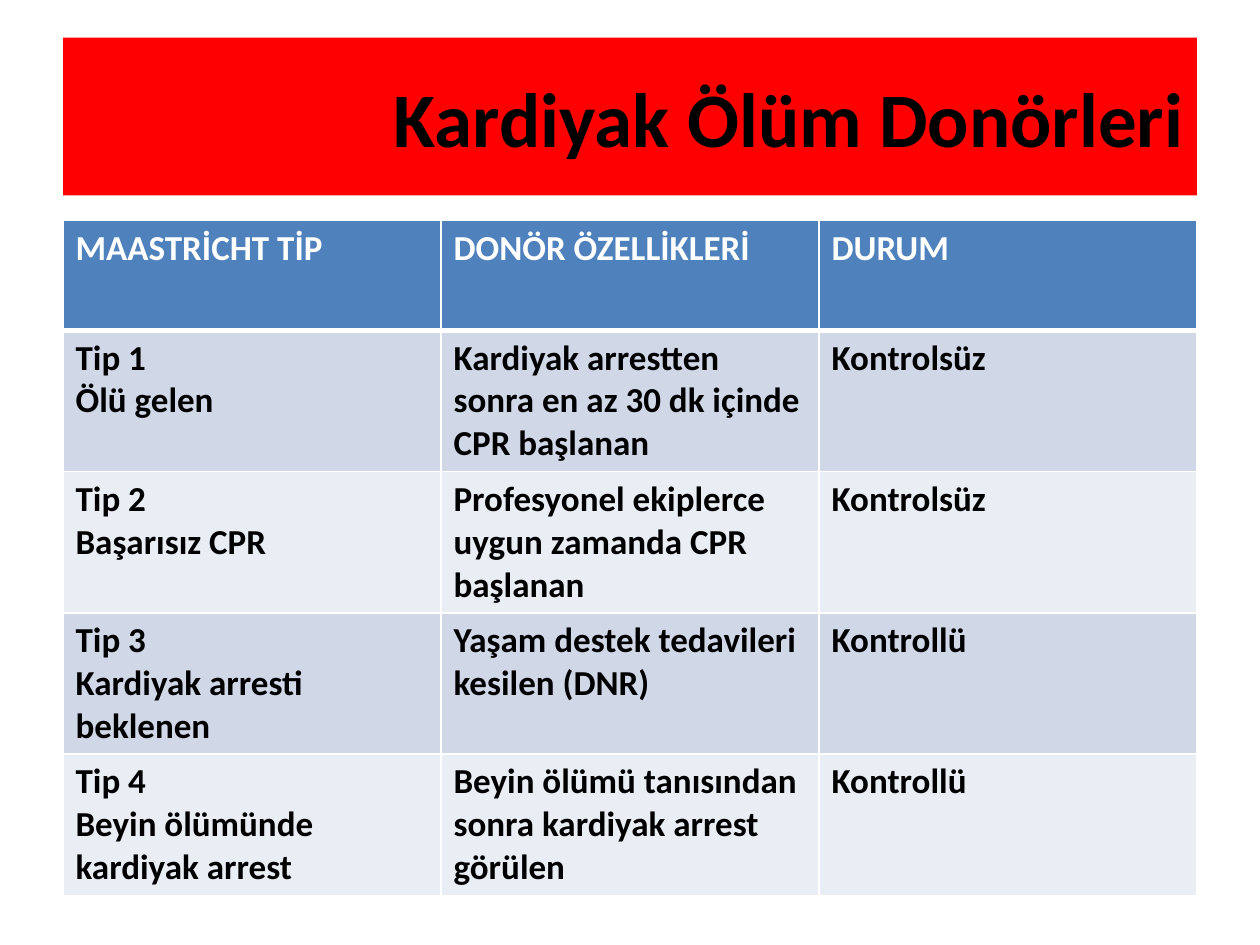
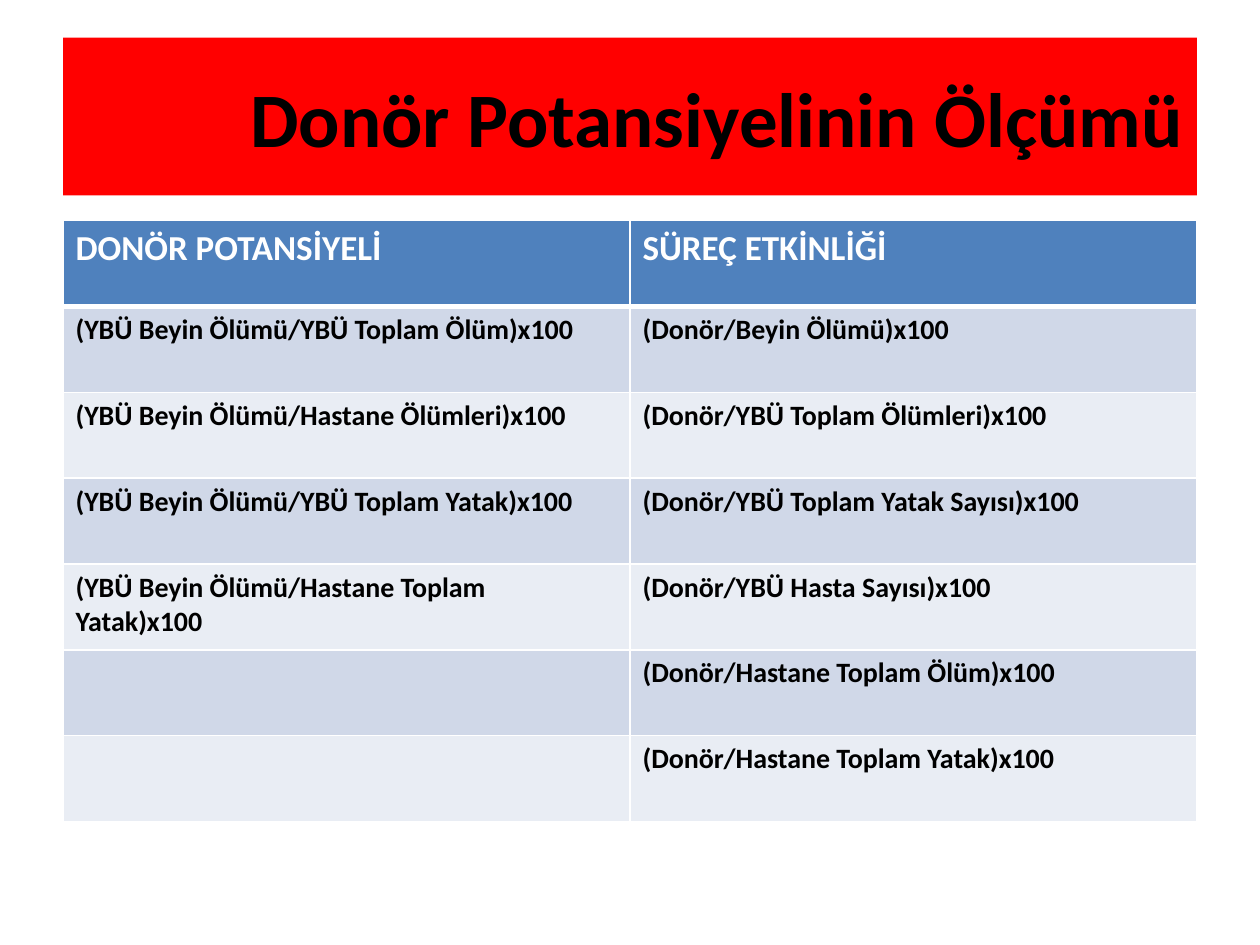
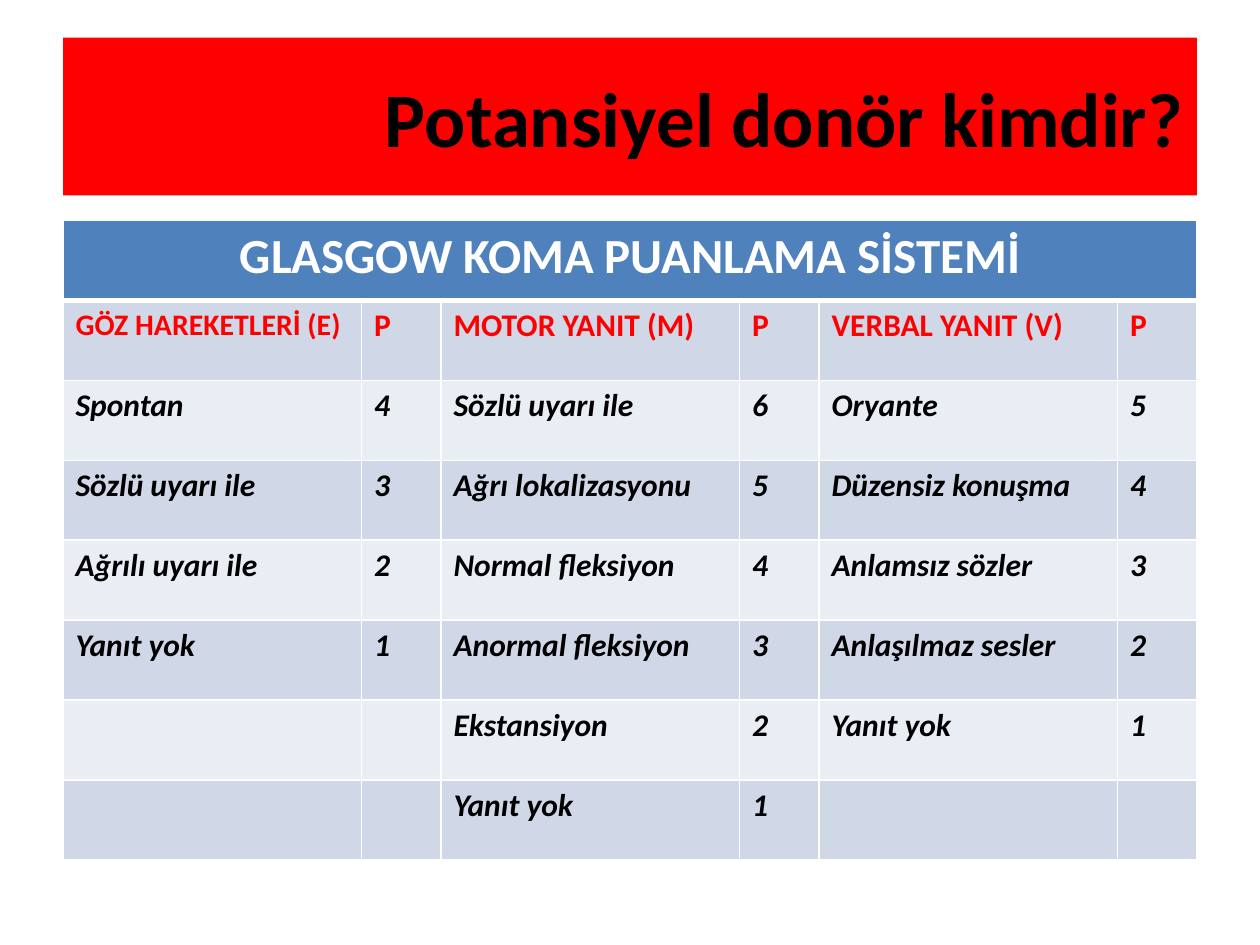
from lxml.etree import SubElement
from pptx import Presentation
from pptx.dml.color import RGBColor
from pptx.enum.text import MSO_ANCHOR, PP_ALIGN
from pptx.oxml.ns import qn
from pptx.util import Cm, Pt

# Content
HEADER = {"size": 20, "color": "FFFFFF"}
SCALE_HEAD = {"size": 18, "color": "FF0000"}
SCALE_BODY = {"size": 18, "italic": True}

SLIDES = [
    {
        "title": "Kardiyak Ölüm Donörleri",
        "columns": [7.62] * 3,
        "row_height": 2.21,
        "table_height": 13.39,
        "header": HEADER,
        "body": {"size": 20},
        "rows": [
            ("MAASTRİCHT TİP", "DONÖR ÖZELLİKLERİ", "DURUM"),
            ("Tip 1\nÖlü gelen",
             "Kardiyak arrestten sonra en az 30 dk içinde CPR başlanan", "Kontrolsüz"),
            ("Tip 2\nBaşarısız CPR",
             "Profesyonel ekiplerce uygun zamanda CPR başlanan", "Kontrolsüz"),
            ("Tip 3\nKardiyak arresti beklenen",
             "Yaşam destek tedavileri kesilen (DNR)", "Kontrollü"),
            ("Tip 4\nBeyin ölümünde kardiyak arrest",
             "Beyin ölümü tanısından sonra kardiyak arrest görülen", "Kontrollü"),
        ],
    },
    {
        "title": "Donör Potansiyelinin Ölçümü",
        "columns": [11.43] * 2,
        "row_height": 1.73,
        "table_height": 12.14,
        "header": HEADER,
        "body": {"size": 16},
        "rows": [
            ("DONÖR POTANSİYELİ", "SÜREÇ ETKİNLİĞİ"),
            ("(YBÜ Beyin Ölümü/YBÜ Toplam Ölüm)x100", "(Donör/Beyin Ölümü)x100"),
            ("(YBÜ Beyin Ölümü/Hastane Ölümleri)x100", "(Donör/YBÜ Toplam Ölümleri)x100"),
            ("(YBÜ Beyin Ölümü/YBÜ Toplam Yatak)x100", "(Donör/YBÜ Toplam Yatak Sayısı)x100"),
            ("(YBÜ Beyin Ölümü/Hastane Toplam Yatak)x100", "(Donör/YBÜ Hasta Sayısı)x100"),
            ("", "(Donör/Hastane Toplam Ölüm)x100"),
            ("", "(Donör/Hastane Toplam Yatak)x100"),
        ],
    },
    {
        "title": "Potansiyel donör kimdir?",
        "columns": [6.02, 1.6] * 3,
        "row_height": 1.61,
        "table_height": 12.88,
        "header": {"size": 28, "color": "FFFFFF", "align": PP_ALIGN.CENTER},
        "body": SCALE_BODY,
        "special": {(1, col): SCALE_HEAD for col in range(1, 6)}
        | {(1, 0): SCALE_HEAD | {"size": 17}},
        "rows": [
            ("GLASGOW KOMA PUANLAMA SİSTEMİ",),
            ("GÖZ HAREKETLERİ (E)", "P", "MOTOR YANIT (M)", "P", "VERBAL YANIT (V)", "P"),
            ("Spontan", "4", "Sözlü uyarı ile", "6", "Oryante", "5"),
            ("Sözlü uyarı ile", "3", "Ağrı lokalizasyonu", "5", "Düzensiz konuşma", "4"),
            ("Ağrılı uyarı ile", "2", "Normal fleksiyon", "4", "Anlamsız sözler", "3"),
            ("Yanıt yok", "1", "Anormal fleksiyon", "3", "Anlaşılmaz sesler", "2"),
            ("", "", "Ekstansiyon", "2", "Yanıt yok", "1"),
            ("", "", "Yanıt yok", "1", "", ""),
        ],
    },
]

# Shared look
FONT = "Calibri"
BAND_RED = "FF0000"
HEADER_BLUE = "4F81BD"
ROW_FILLS = ("E9EDF4", "D0D8E8")
BORDER = "FFFFFF"
LEFT, WIDTH = Cm(1.27), Cm(22.86)
TITLE_BOX = {"left": LEFT, "top": Cm(0.76), "width": WIDTH, "height": Cm(3.18)}
TABLE_TOP = Cm(4.45)


def rgb(hex_color):
    return RGBColor.from_string(hex_color)


def write(frame, text, size, color="000000", italic=False, align=PP_ALIGN.LEFT):
    frame.text = text
    for paragraph in frame.paragraphs:
        paragraph.alignment = align
        for run in paragraph.runs:
            look = {"name": FONT, "size": Pt(size), "bold": True, "italic": italic}
            for attribute, value in look.items():
                setattr(run.font, attribute, value)
            run.font.color.rgb = rgb(color)


def add_borders(cell, widths):
    """Draw left, right, top and bottom lines, which must precede the fill."""
    properties = cell._tc.get_or_add_tcPr()
    for position, (side, points) in enumerate(zip("LRTB", widths)):
        line = SubElement(properties, qn(f"a:ln{side}"), w=str(Pt(points)))
        fill = SubElement(line, qn("a:solidFill"))
        SubElement(fill, qn("a:srgbClr"), val=BORDER)
        properties.insert(position, line)


def add_title(slide, text):
    title = slide.shapes.title
    for attribute, value in TITLE_BOX.items():
        setattr(title, attribute, value)
    title.fill.solid()
    title.fill.fore_color.rgb = rgb(BAND_RED)
    title.text_frame.vertical_anchor = MSO_ANCHOR.MIDDLE
    write(title.text_frame, text, 44, align=PP_ALIGN.RIGHT)


def add_data_table(slide, content):
    rows, columns = content["rows"], content["columns"]
    table_height = Cm(content["table_height"])
    frame = slide.shapes.add_table(
        len(rows), len(columns), LEFT, TABLE_TOP, WIDTH, table_height)
    table = frame.table
    for column, width in zip(table.columns, columns):
        column.width = Cm(width)
    for row in table.rows:
        row.height = Cm(content["row_height"])
    frame.height = table_height

    # Fills, borders and text
    for r, texts in enumerate(rows):
        base = content["body"] if r else content["header"]
        for c in range(len(columns)):
            cell = table.cell(r, c)
            cell.fill.solid()
            cell.fill.fore_color.rgb = rgb(ROW_FILLS[r % 2] if r else HEADER_BLUE)
            add_borders(cell, (1, 1, 3 if r == 1 else 1, 1 if r else 3))
            if c < len(texts) and texts[c]:
                look = content.get("special", {}).get((r, c), base)
                write(cell.text_frame, texts[c], **look)
    if len(rows[0]) == 1:
        table.cell(0, 0).merge(table.cell(0, len(columns) - 1))


def main():
    deck = Presentation()
    deck.slide_width, deck.slide_height = Cm(25.4), Cm(19.05)
    title_only = deck.slide_layouts[5]
    for content in SLIDES:
        slide = deck.slides.add_slide(title_only)
        add_title(slide, content["title"])
        add_data_table(slide, content)
    deck.save("out.pptx")


if __name__ == "__main__":
    main()
